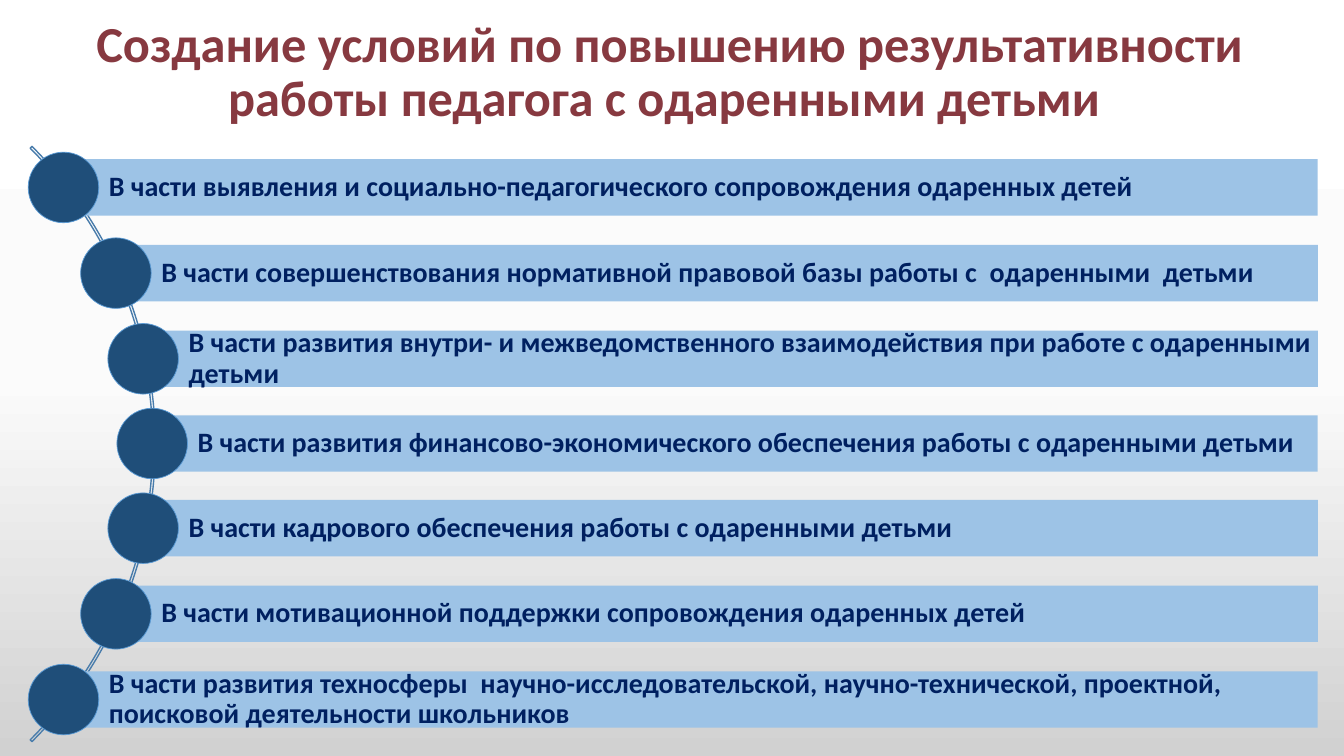
from copy import deepcopy
from math import sqrt

from pptx import Presentation
from pptx.dml.color import RGBColor
from pptx.enum import shapes, text
from pptx.oxml.ns import qn
from pptx.util import Emu, Pt

PX = 9144  # 100 px to the inch
KIND = shapes.MSO_SHAPE

TITLE = ("Создание условий по повышению результативности "
         "работы педагога с одаренными детьми ")
ITEMS = [
    "В части выявления и социально-педагогического сопровождения одаренных детей",
    "В части совершенствования нормативной правовой базы работы с  одаренными  детьми",
    "В части развития внутри- и межведомственного взаимодействия при работе с одаренными детьми",
    "В части развития финансово-экономического обеспечения работы с одаренными детьми",
    "В части кадрового обеспечения работы с одаренными детьми",
    "В части мотивационной поддержки сопровождения одаренных детей",
    "В части развития техносферы  научно-исследовательской, научно-технической, "
    "проектной, поисковой деятельности школьников",
]


def px(n):
    return Emu(n * PX)


def rgb(code):
    return RGBColor.from_string(code)


class Deck:
    face = "Calibri"

    def __init__(self, wide, high):
        self.prs = Presentation()
        self.prs.slide_width, self.prs.slide_height = px(wide), px(high)
        self.slide = self.prs.slides.add_slide(self.prs.slide_layouts[5])

    def back(self, *codes):
        """Fill the background with three evenly spaced colours, top to bottom."""
        fill = self.slide.background.fill
        fill.gradient()
        fill.gradient_angle = 270
        stops = self.slide.element.find(".//" + qn("a:gsLst"))
        stops.insert(1, deepcopy(stops[0]))
        for i, (stop, code) in enumerate(zip(fill.gradient_stops, codes)):
            stop.position = i / 2
            stop.color.rgb = rgb(code)

    def label(self, shape, words, size, code, align, pads):
        frame = shape.text_frame
        frame.text = words
        frame.word_wrap = True
        frame.auto_size = text.MSO_AUTO_SIZE.NONE
        frame.vertical_anchor = text.MSO_ANCHOR.MIDDLE
        (frame.margin_left, frame.margin_top,
         frame.margin_right, frame.margin_bottom) = map(px, pads)
        para = frame.paragraphs[0]
        para.alignment, para.line_spacing = align, 0.9
        font = para.font
        font.name, font.size, font.bold = self.face, Pt(size), True
        font.color.rgb = rgb(code)

    def title(self, words, x, y, w, h):
        head = self.slide.shapes.title
        head.left, head.top, head.width, head.height = map(px, (x, y, w, h))
        self.label(head, words, 36, "873940", text.PP_ALIGN.CENTER, (10, 5, 10, 5))

    def shape(self, kind, x, y, w, h, fill=None, line=None, thick=1):
        item = self.slide.shapes.add_shape(kind, *map(px, (x, y, w, h)))
        item.shadow.inherit = False
        if fill:
            item.fill.solid()
            item.fill.fore_color.rgb = rgb(fill)
        else:
            item.fill.background()
        if line:
            item.line.color.rgb = rgb(line)
            item.line.width = Pt(thick)
        else:
            item.line.fill.background()
        return item

    def arc(self, x, y, size):
        curve = self.shape(KIND.BLOCK_ARC, x, y, size, size, line="497CAB")
        for i, value in enumerate((189, 27, 0.003)):
            curve.adjustments[i] = value

    def row(self, words, x, y):
        """Draw a bar with its dot, both centred on y; x is the dot's centre."""
        bar = self.shape(KIND.RECTANGLE, x, y - 28, 1307 - x, 56, "9DC3E6")
        self.label(bar, words, 20, "002060", text.PP_ALIGN.LEFT, (45, 6, 6, 6))
        self.shape(KIND.OVAL, x - 35, y - 35, 70, 70, "1F4E79", "5B9BD5", 0.5)


def main():
    deck = Deck(1333, 750)
    deck.back("FFFFFF", "FBFBFB", "D1D1D1")
    deck.title(TITLE, 37, 0, 1255, 145)
    deck.arc(-681, 23, 835)
    mid, step, radius, peak = 440, 84.5, 410, 151
    for i, words in enumerate(ITEMS):
        drop = (i - len(ITEMS) // 2) * step
        x = peak - radius + sqrt(radius ** 2 - drop ** 2)
        deck.row(words, round(x), round(mid + drop))
    deck.prs.save("out.pptx")


if __name__ == "__main__":
    main()
